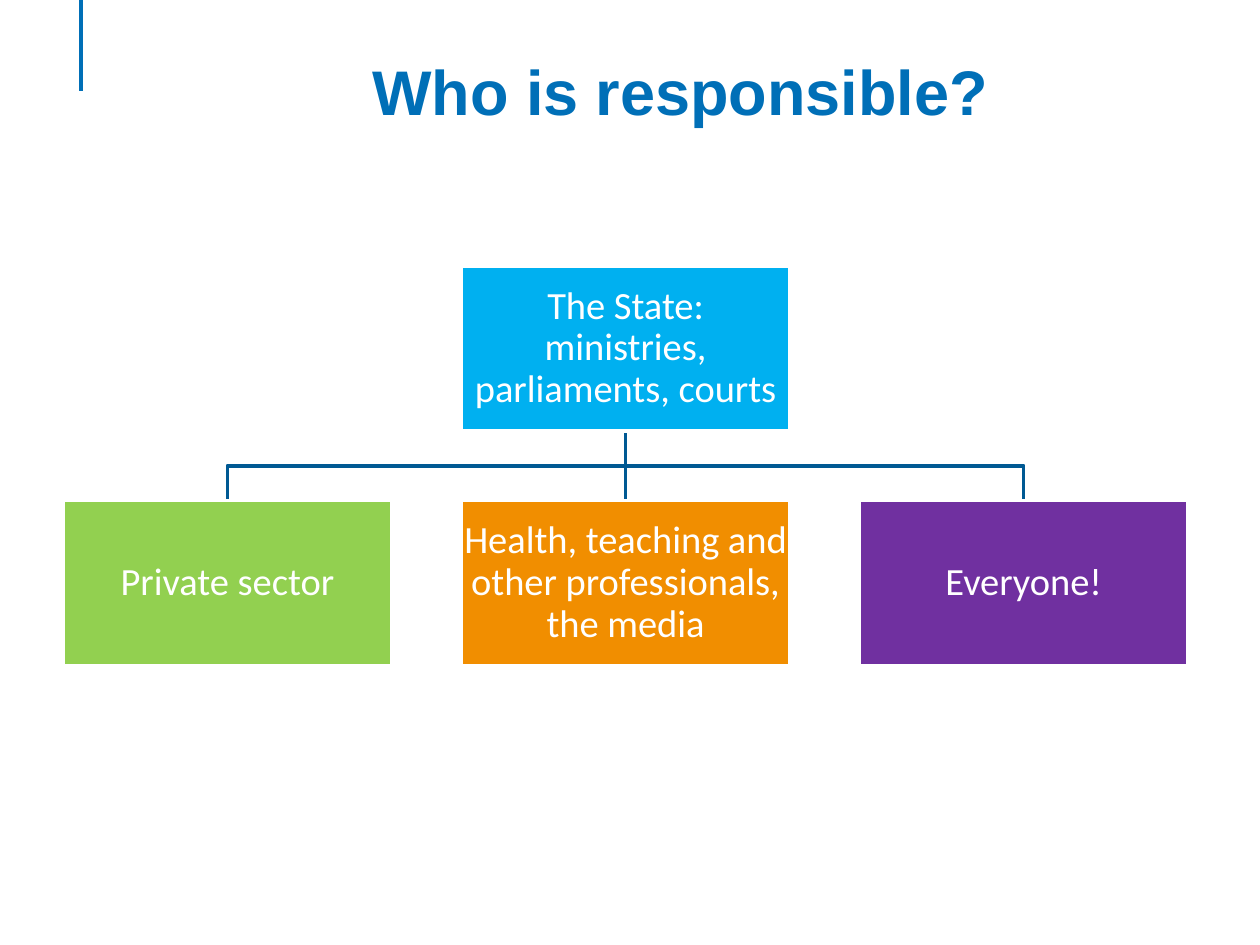
"""Build the slide on who is responsible, with a two-level chart."""
import pptx
import pptx.dml.color
import pptx.enum.shapes
import pptx.enum.text
import pptx.oxml
import pptx.util

Pt = pptx.util.Pt
MIDDLE = pptx.enum.text.MSO_ANCHOR.MIDDLE
CENTER = pptx.enum.text.PP_ALIGN.CENTER

TITLE = "Who is responsible?"
STATE = ("The State: ministries, parliaments, courts", "00B0F0")
ACTORS = [
    ("Private sector", "92D050"),
    ("Health, teaching and other professionals, the media", "F18E00"),
    ("Everyone!", "7030A0"),
]

THEME = {
    "accent": "006FB7",
    "branch": "005993",
    "white": "FFFFFF",
    "line": 2,
    "title": {"name": "Arial", "size": Pt(36), "bold": True},
    "box": {"name": "Calibri", "size": Pt(22), "bold": False},
}

BOX_WIDTH, BOX_HEIGHT = 188, 94.3
LEFT, COLUMN_STEP = 36, 227.5
STATE_TOP, ACTOR_TOP = 152, 286
STATE_BOTTOM = STATE_TOP + BOX_HEIGHT
BRANCH_Y = (STATE_BOTTOM + ACTOR_TOP) / 2


def rgb(value):
    return pptx.dml.color.RGBColor.from_string(value)


def apply(target, values):
    for name, value in values.items():
        setattr(target, name, value)


def style_line(shape, color):
    shape.line.color.rgb = rgb(color)
    shape.line.width = Pt(THEME["line"])


def write(shape, text, font, color, inset, paragraph_format):
    frame = shape.text_frame
    apply(frame, {"word_wrap": True, "vertical_anchor": MIDDLE, **inset})
    paragraph = frame.paragraphs[0]
    apply(paragraph, {"text": text, "alignment": CENTER, **paragraph_format})
    apply(paragraph.runs[0].font, font)
    paragraph.runs[0].font.color.rgb = rgb(color)
    return paragraph


def add_line(slide, x, top, bottom, color):
    line = slide.shapes.add_connector(
        pptx.enum.shapes.MSO_CONNECTOR.STRAIGHT, Pt(x), Pt(top), Pt(x), Pt(bottom))
    style_line(line, color)
    properties = line._element.spPr
    properties.append(properties.makeelement(pptx.oxml.ns.qn("a:effectLst"), {}))
    return line


def add_branch(slide, start_x, end_x):
    builder = slide.shapes.build_freeform(Pt(start_x), Pt(STATE_BOTTOM))
    corners = [(start_x, BRANCH_Y), (end_x, BRANCH_Y), (end_x, ACTOR_TOP)]
    builder.add_line_segments([(Pt(x), Pt(y)) for x, y in corners], close=False)
    branch = builder.convert_to_shape()
    branch.shadow.inherit = False
    branch.fill.background()
    style_line(branch, THEME["branch"])


def add_box(slide, left, top, text, color):
    box = slide.shapes.add_shape(
        pptx.enum.shapes.MSO_SHAPE.RECTANGLE,
        Pt(left), Pt(top), Pt(BOX_WIDTH), Pt(BOX_HEIGHT))
    box.shadow.inherit = False
    box.fill.solid()
    box.fill.fore_color.rgb = rgb(color)
    style_line(box, THEME["white"])
    sides = ("left", "top", "right", "bottom")
    inset = {f"margin_{side}": Pt(1.4) for side in sides}
    write(box, text, THEME["box"], THEME["white"], inset, {"line_spacing": 0.9})
    return box


def main():
    presentation = pptx.Presentation()
    apply(presentation, {"slide_width": Pt(720), "slide_height": Pt(540)})
    slide = presentation.slides.add_slide(presentation.slide_layouts[6])

    add_line(slide, 46.4, 0, 52, THEME["accent"])
    title = slide.shapes.add_textbox(Pt(36), Pt(26), Pt(669.6), Pt(51))
    paragraph = write(title, TITLE, THEME["title"], THEME["accent"], {}, {})
    paragraph._p.get_or_add_pPr().set("marL", str(Pt(36)))

    lefts = [LEFT + index * COLUMN_STEP for index in range(len(ACTORS))]
    centers = [left + BOX_WIDTH / 2 for left in lefts]
    add_branch(slide, centers[1], centers[2])
    trunk = add_line(slide, centers[1], STATE_BOTTOM, ACTOR_TOP, THEME["branch"])
    add_branch(slide, centers[1], centers[0])

    state = add_box(slide, lefts[1], STATE_TOP, *STATE)
    actors = [add_box(slide, left, ACTOR_TOP, *actor)
              for left, actor in zip(lefts, ACTORS)]
    trunk.begin_connect(state, 2)
    trunk.end_connect(actors[1], 0)

    presentation.save("out.pptx")


if __name__ == "__main__":
    main()
